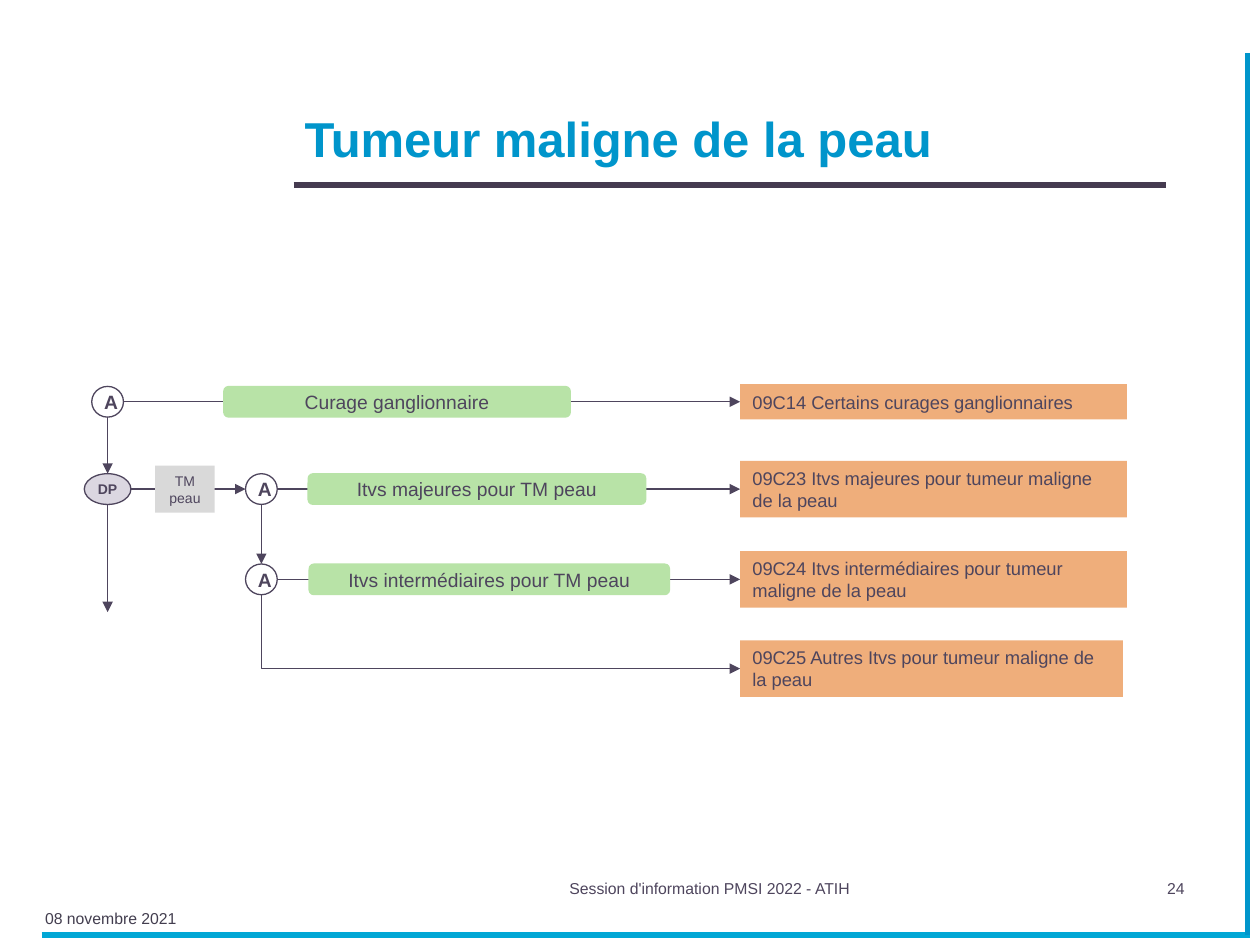
from lxml.etree import SubElement
from pptx import Presentation
from pptx.dml.color import RGBColor
from pptx.enum.shapes import MSO_CONNECTOR, MSO_SHAPE
from pptx.enum.text import MSO_ANCHOR, PP_ALIGN
from pptx.oxml.ns import qn
from pptx.util import Cm, Pt

# Content: lengths in cm
TITLE = "Tumeur maligne de la peau"
FOOTERS = [  # text, box, alignment, colour
    ("08 novembre 2021", (0.66, 18.19, 4.24, 0.74), "left", "date"),
    ("Session d'information PMSI 2022 - ATIH", (11.23, 17.58, 8.05, 1.27), "left", "ink"),
    ("24", (19.48, 17.58, 4.65, 1.12), "right", "ink"),
]
FRAME = [  # start, end, colour
    ((5.92, 3.73), (17.58, 0), "rule"),
    ((0.84, 18.85), (24.36, 0), "bottom"),
    ((25.15, 18.85), (0, -17.78), "accent"),
]
ROWS = [8.1, 9.86, 11.68, 13.48]  # centre line of each row
X_ROOT, X_SKIN = 2.17, 5.27       # centre lines of the two columns of tests
X_OUT = 14.92                     # left edge of the outcomes
TESTS = [(X_ROOT, 0), (X_SKIN, 1), (X_SKIN, 2)]
ACTS = [  # text, row, left, width
    ("Curage ganglionnaire", 0, 4.5, 7.01),
    ("Itvs majeures pour TM peau", 1, 6.2, 6.83),
    ("Itvs intermédiaires pour TM peau", 2, 6.22, 7.29),
]
OUTCOMES = [  # text, width, height
    ("09C14 Certains curages ganglionnaires", 7.8, 0.71),
    ("09C23 Itvs majeures pour tumeur maligne de la peau", 7.8, 1.14),
    ("09C24 Itvs intermédiaires pour tumeur maligne de la peau", 7.8, 1.14),
    ("09C25 Autres Itvs pour tumeur maligne de la peau", 7.72, 1.14),
]
R_TEST, R_DP = 0.32, 0.47  # half widths of the circles and of the DP ellipse
H_NODE = 0.62

THEME = {
    "font": "Arial",
    "color": {"ink": "4E455D", "date": "433E4F", "accent": "0095CB", "rule": "453B50",
              "bottom": "02A7D5", "test": "FFFFFF", "dp": "DBD7E1", "group": "D9D9D9",
              "act": "B8E3A7", "outcome": "EFAE7B"},
    "size": {"title": 28, "footer": 9, "test": 11, "dp": 8, "group": 8, "act": 11,
             "outcome": 10.5},
    "line": {"frame": 3.06, "flow": 0.75},
}
ALIGN = {"left": PP_ALIGN.LEFT, "center": PP_ALIGN.CENTER, "right": PP_ALIGN.RIGHT}

prs = Presentation()
prs.slide_width, prs.slide_height = Cm(25.4), Cm(19.05)
s = prs.slides.add_slide(prs.slide_layouts[6])


def color(name):
    return RGBColor.from_string(THEME["color"][name])


def write(sp, text, size, align="center", anchor=MSO_ANCHOR.MIDDLE, ink="ink", bold=False):
    tf = sp.text_frame
    tf.word_wrap, tf.vertical_anchor = True, anchor
    p = tf.paragraphs[0]
    p.alignment = ALIGN[align]
    r = p.add_run()
    r.text = text
    values = {"name": THEME["font"], "size": Pt(THEME["size"][size]), "bold": bold}
    for key, value in values.items():
        setattr(r.font, key, value)
    r.font.color.rgb = color(ink)


def text_box(box, text, size, **fmt):
    write(s.shapes.add_textbox(*map(Cm, box)), text, size, **fmt)


def centred(x, y, w, h):
    return x - w / 2, y - h / 2, w, h


def shape(kind, box, fill, outlined=False):
    sp = s.shapes.add_shape(kind, *map(Cm, box))
    sp.shadow.inherit = False
    sp.fill.solid()
    sp.fill.fore_color.rgb = color(fill)
    if outlined:
        sp.line.color.rgb, sp.line.width = color("ink"), Pt(THEME["line"]["flow"])
    else:
        sp.line.fill.background()
    return sp


def line(start, end, ink="ink", weight="flow", arrow=True, kind=MSO_CONNECTOR.STRAIGHT):
    cn = s.shapes.add_connector(kind, *map(Cm, (*start, *end)))
    cn.line.color.rgb, cn.line.width = color(ink), Pt(THEME["line"][weight])
    if arrow:
        SubElement(cn.line._get_or_add_ln(), qn("a:tailEnd"), type="triangle")
    SubElement(cn._element.spPr, qn("a:effectLst"))
    return cn


def elbow(start, end):
    """Arrow going down, then right: a quarter-turned, flipped bentConnector2."""
    (x1, y1), (x2, y2) = start, end
    cx, cy, w, h = (x1 + x2) / 2, (y1 + y2) / 2, y2 - y1, x2 - x1
    cn = line((cx - w / 2, cy - h / 2), (cx + w / 2, cy + h / 2), kind=MSO_CONNECTOR.ELBOW)
    spPr = cn._element.spPr
    spPr.find(qn("a:prstGeom")).set("prst", "bentConnector2")
    for key, value in {"rot": "16200000", "flipH": "1"}.items():
        spPr.find(qn("a:xfrm")).set(key, value)


# Frame, title and footers
for (x, y), (dx, dy), ink in FRAME:
    line((x, y), (x + dx, y + dy), ink, "frame", arrow=False)
text_box((5.89, 0.48, 17.2, 3.02), TITLE, "title", align="left",
         anchor=MSO_ANCHOR.BOTTOM, ink="accent", bold=True)
for text, box, align, ink in FOOTERS:
    text_box(box, text, "footer", align=align, anchor=MSO_ANCHOR.TOP, ink=ink)

# Arrows
half = H_NODE / 2
for x, row in TESTS:
    line((x + R_TEST, ROWS[row]), (X_OUT, ROWS[row]))
line((X_ROOT + R_DP, ROWS[1]), (X_SKIN - R_TEST, ROWS[1]))
line((X_ROOT, ROWS[0] + half), (X_ROOT, ROWS[1] - half))
line((X_ROOT, ROWS[1] + half), (X_ROOT, 12.34))
line((X_SKIN, ROWS[1] + half), (X_SKIN, ROWS[2] - half))
elbow((X_SKIN, ROWS[2] + half), (X_OUT, ROWS[3]))

# Tests: the label sits in its own box over each ellipse
NODES = [("A", x, row, R_TEST, "test") for x, row in TESTS] + [("DP", X_ROOT, 1, R_DP, "dp")]
for text, x, row, radius, name in NODES:
    box = centred(x, ROWS[row], 2 * radius, H_NODE)
    shape(MSO_SHAPE.OVAL, box, name, outlined=True)
    text_box(box, text, name, bold=True)

# Diagnosis group, acts and outcomes
write(shape(MSO_SHAPE.RECTANGLE, centred(3.73, ROWS[1], 1.2, 0.95), "group"), "TM peau", "group")
for text, row, x, w in ACTS:
    box = (x, ROWS[row] - 0.32, w, 0.64)
    write(shape(MSO_SHAPE.ROUNDED_RECTANGLE, box, "act"), text, "act")
for (text, w, h), y in zip(OUTCOMES, ROWS):
    write(shape(MSO_SHAPE.RECTANGLE, (X_OUT, y - h / 2, w, h), "outcome"), text, "outcome",
          align="left")

prs.save("out.pptx")
